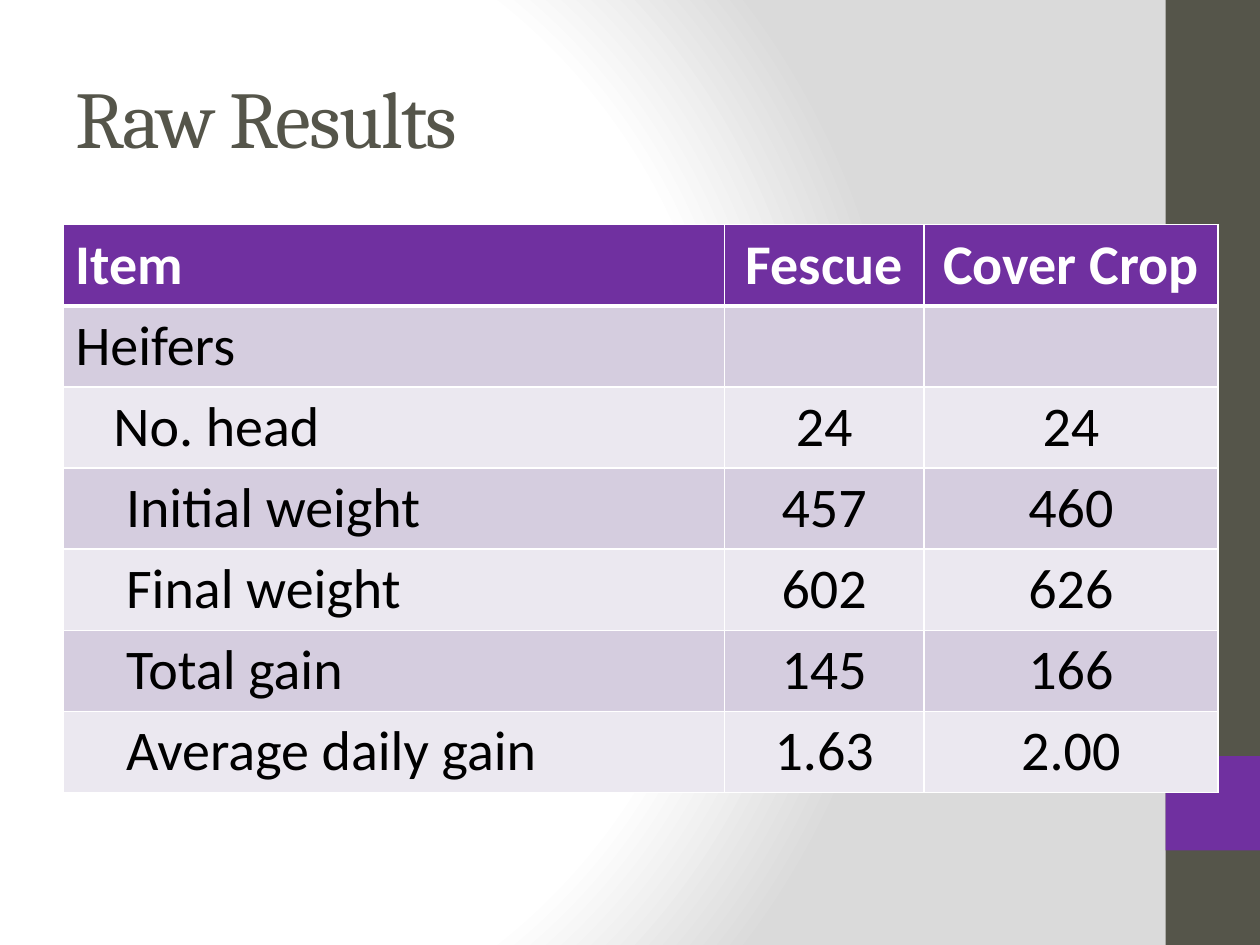
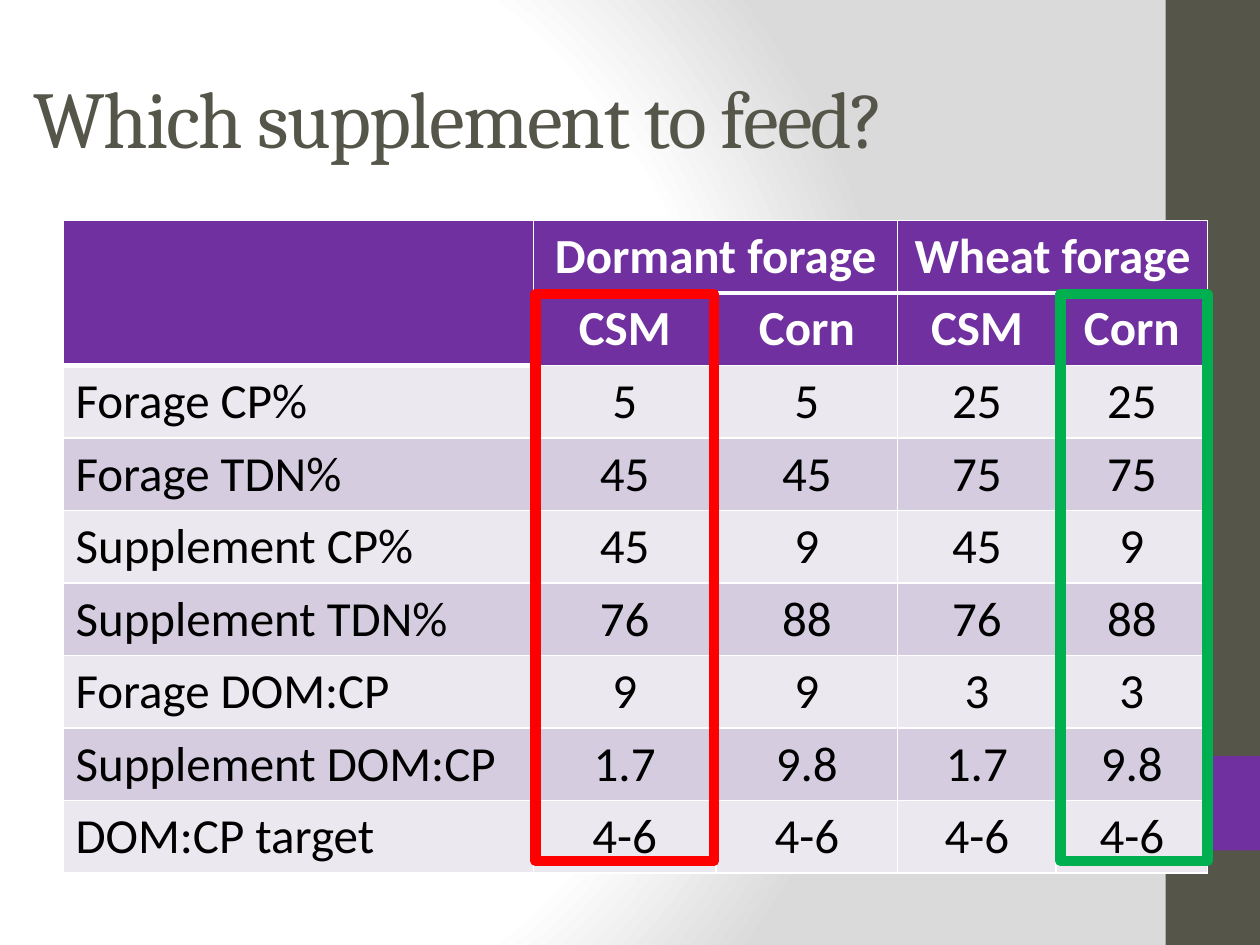
from dataclasses import dataclass
from typing import Any, NamedTuple

from pptx import Presentation
from pptx.dml.color import RGBColor
from pptx.enum.shapes import MSO_SHAPE
from pptx.enum.text import MSO_ANCHOR, MSO_AUTO_SIZE, PP_ALIGN
from pptx.oxml import parse_xml
from pptx.oxml.ns import nsdecls, qn
from pptx.util import Inches, Pt

RECT = MSO_SHAPE.RECTANGLE
LEFT, CENTER = PP_ALIGN.LEFT, PP_ALIGN.CENTER
MIDDLE = MSO_ANCHOR.MIDDLE
FIXED = MSO_AUTO_SIZE.NONE

COLS, ROWS = 120, 90
WIDE, HIGH = Inches(10), Inches(7.5)
UNIT = WIDE / COLS


@dataclass(frozen=True)
class Theme:
    olive: str = "55554A"
    purple: str = "7030A0"
    white: str = "FFFFFF"
    black: str = "000000"
    gray: str = "DADADA"
    dark: str = "D5CDDF"
    light: str = "EBE8F0"
    red: str = "FF0000"
    green: str = "00B050"
    serif: str = "Cambria"
    sans: str = "Calibri"
    title: float = 46
    large: float = 32
    small: float = 28
    thin: float = 1
    thick: float = 3
    frame: float = 6


THEME = Theme()


class Box(NamedTuple):
    left: float
    top: float
    width: float
    height: float


class Frame(NamedTuple):
    box: Box
    color: str


class Merge(NamedTuple):
    row: int
    col: int
    last_row: int
    last_col: int


@dataclass(frozen=True)
class Grid:
    left: float
    top: float
    cols: tuple[float, ...]
    row: float
    size: float
    data: tuple[tuple[str, ...], ...]
    heads: int = 1
    merges: tuple[Merge, ...] = ()
    indents: tuple[float, ...] = ()


@dataclass(frozen=True)
class Page:
    title: str
    box: Box
    grid: Grid
    frames: tuple[Frame, ...] = ()


BANDS = (
    Frame(Box(111, 0, 9, ROWS), THEME.olive),
    Frame(Box(111, 72, 9, 9), THEME.purple),
)

PAGES = (
    Page(
        "Raw Results",
        Box(6, 3.6, 100, 15),
        Grid(
            6, 21.4, (63, 19, 28), 7.7, THEME.large,
            (
                ("Item", "Fescue", "Cover Crop"),
                ("Heifers", "", ""),
                ("No. head", "24", "24"),
                ("Initial weight", "457", "460"),
                ("Final weight", "602", "626"),
                ("Total gain", "145", "166"),
                ("Average daily gain", "1.63", "2.00"),
            ),
            indents=(0, 0, 3.6, 4.8, 4.8, 4.8, 4.8),
        ),
    ),
    Page(
        "Which supplement to feed?",
        Box(2, 3.6, 112, 15),
        Grid(
            6, 21, (44.8, 17.4, 17.3, 15.1, 14.4), 6.9, THEME.small,
            (
                ("", "Dormant forage", "", "Wheat forage", ""),
                ("", "CSM", "Corn", "CSM", "Corn"),
                ("Forage CP%", "5", "5", "25", "25"),
                ("Forage TDN%", "45", "45", "75", "75"),
                ("Supplement CP%", "45", "9", "45", "9"),
                ("Supplement TDN%", "76", "88", "76", "88"),
                ("Forage DOM:CP", "9", "9", "3", "3"),
                ("Supplement DOM:CP", "1.7", "9.8", "1.7", "9.8"),
                ("DOM:CP target", "4-6", "4-6", "4-6", "4-6"),
            ),
            heads=2,
            merges=(Merge(0, 0, 1, 0), Merge(0, 1, 0, 2), Merge(0, 3, 0, 4)),
        ),
        (
            Frame(Box(51, 28, 17, 54), THEME.red),
            Frame(Box(101, 28, 14, 54), THEME.green),
        ),
    ),
)


def span(count: float) -> int:
    return round(count * UNIT)


def place(box: Box) -> tuple[int, ...]:
    return tuple(span(side) for side in box)


def write(body: Any, text: str, *, size: float, font: str, color: str,
          bold: bool = False, align: Any = LEFT, track: int = 0) -> None:
    para = body.paragraphs[0]
    para.alignment = align
    run = para.add_run()
    run.text = text
    run.font.size = Pt(size)
    run.font.name = font
    run.font.bold = bold
    run.font.color.rgb = RGBColor.from_string(color)
    if track:
        run.font._element.set("spc", str(track))


def draw_rect(slide: Any, frame: Frame, filled: bool) -> Any:
    shape = slide.shapes.add_shape(RECT, *place(frame.box))
    shape.shadow.inherit = False
    color = RGBColor.from_string(frame.color)
    if filled:
        shape.fill.solid()
        shape.fill.fore_color.rgb = color
        shape.line.fill.background()
    else:
        shape.fill.background()
        shape.line.color.rgb = color
        shape.line.width = Pt(THEME.frame)
    return shape


def set_back(master: Any) -> None:
    master.background.fill.solid()
    solid = master.element.cSld.find(".//" + qn("a:solidFill"))
    stops = ((0, THEME.white), (75, THEME.white), (100, THEME.gray))
    marks = "".join(
        f'<a:gs pos="{pos * 1000}"><a:srgbClr val="{color}"/></a:gs>'
        for pos, color in stops
    )
    fill = parse_xml(
        f'<a:gradFill {nsdecls("a")} rotWithShape="1"><a:gsLst>{marks}</a:gsLst>'
        '<a:path path="circle"><a:fillToRect l="20000" t="50000" '
        'r="100000" b="50000"/></a:path></a:gradFill>'
    )
    solid.getparent().replace(solid, fill)


def set_bands(slide: Any, master: Any) -> None:
    tree = master.shapes.element
    for order, band in enumerate(BANDS):
        node = draw_rect(slide, band, True).element
        node.nvSpPr.cNvPr.set("id", str(100 + order))
        tree.insert(2 + order, node)


def edge_cell(cell: Any, top: float, base: float) -> None:
    props = cell._tc.get_or_add_tcPr()
    sides = {"L": THEME.thin, "R": THEME.thin, "T": top, "B": base}
    for side, width in sides.items():
        props.append(parse_xml(
            f'<a:ln{side} {nsdecls("a")} w="{Pt(width)}"><a:solidFill>'
            f'<a:srgbClr val="{THEME.white}"/></a:solidFill></a:ln{side}>'
        ))


def fill_cell(cell: Any, grid: Grid, row: int, col: int) -> None:
    head = row < grid.heads
    edge_cell(cell, THEME.thick if row == 1 else THEME.thin,
              THEME.thick if row == 0 else THEME.thin)
    shade = THEME.purple if head else THEME.dark if row % 2 else THEME.light
    cell.fill.solid()
    cell.fill.fore_color.rgb = RGBColor.from_string(shade)
    if col == 0 and grid.indents:
        cell.margin_left = Inches(0.1) + span(grid.indents[row])
    text = grid.data[row][col]
    if text:
        write(cell.text_frame, text, size=grid.size, font=THEME.sans,
              color=THEME.white if head else THEME.black, bold=head,
              align=CENTER if col else LEFT)


def draw_grid(slide: Any, grid: Grid) -> None:
    count = len(grid.data)
    box = Box(grid.left, grid.top, sum(grid.cols), grid.row * count)
    table = slide.shapes.add_table(count, len(grid.cols), *place(box)).table
    for col, width in zip(table.columns, grid.cols):
        col.width = span(width)
    for row in table.rows:
        row.height = span(grid.row)
    for part in grid.merges:
        table.cell(part.row, part.col).merge(
            table.cell(part.last_row, part.last_col))
    for row in range(count):
        for col in range(len(grid.cols)):
            fill_cell(table.cell(row, col), grid, row, col)


def draw_title(slide: Any, page: Page) -> None:
    title = slide.shapes.title
    title.left, title.top, title.width, title.height = place(page.box)
    body = title.text_frame
    body.word_wrap = True
    body.auto_size = FIXED
    body.vertical_anchor = MIDDLE
    write(body, page.title, size=THEME.title, font=THEME.serif,
          color=THEME.olive, track=-100)


def main() -> None:
    deck = Presentation()
    deck.slide_width, deck.slide_height = WIDE, HIGH
    master = deck.slide_master
    set_back(master)
    for page in PAGES:
        slide = deck.slides.add_slide(deck.slide_layouts[5])
        if page is PAGES[0]:
            set_bands(slide, master)
        draw_title(slide, page)
        draw_grid(slide, page.grid)
        for frame in page.frames:
            draw_rect(slide, frame, False)
    deck.save("out.pptx")


if __name__ == "__main__":
    main()
